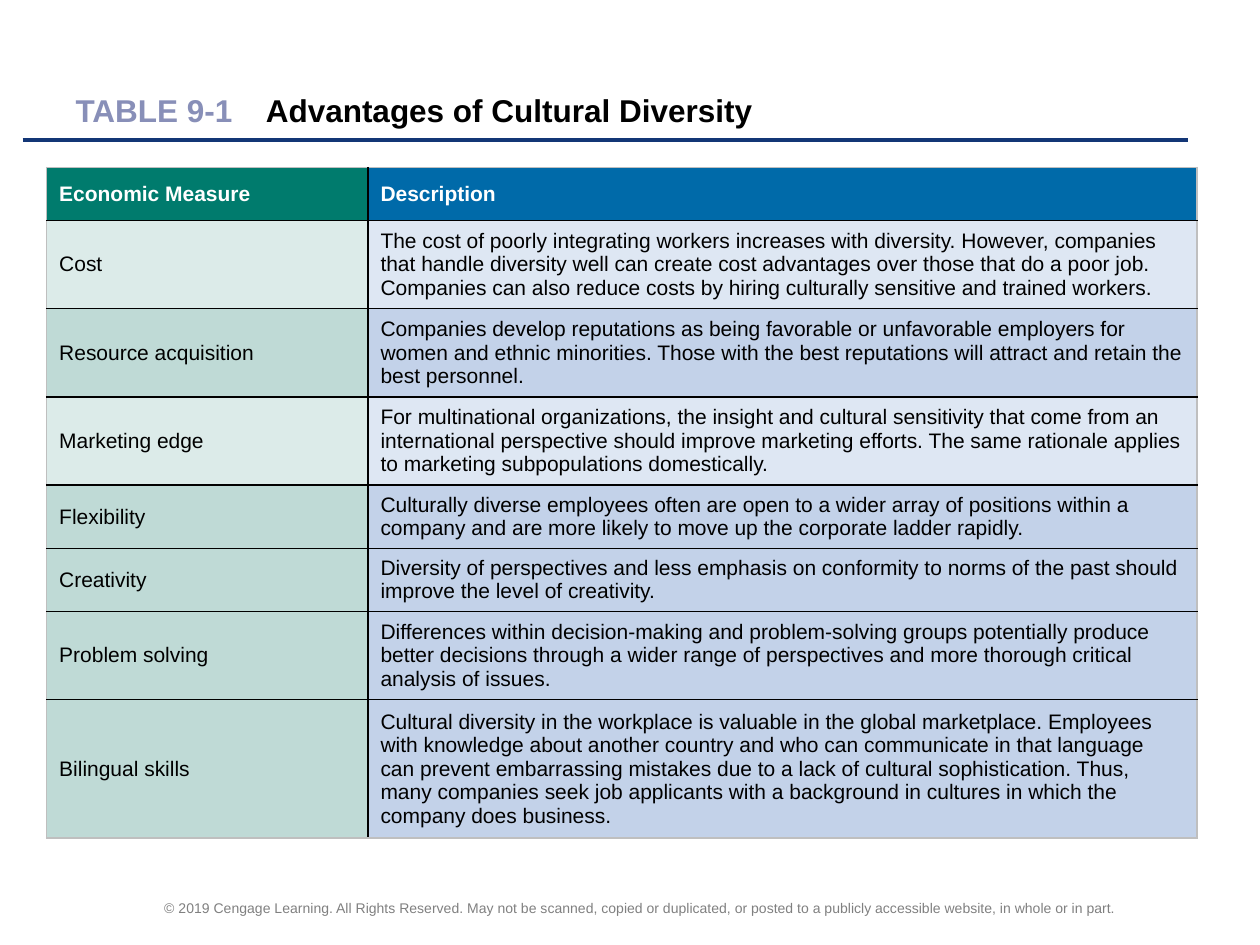
"""Build the Table 9-1 slide on the advantages of cultural diversity."""
from dataclasses import dataclass

from lxml.etree import SubElement as Sub
from pptx import Presentation
from pptx.dml.color import RGBColor as Rgb
from pptx.enum.shapes import MSO_CONNECTOR as Conn
from pptx.enum.text import MSO_ANCHOR as Anchor, PP_ALIGN as Align
from pptx.oxml.ns import qn
from pptx.util import Inches, Pt


@dataclass(frozen=True)
class Theme:
    font: str = "Arial"
    title: int = 18
    body: int = 12
    small: int = 8
    label: str = "888FB8"
    ink: str = "000000"
    paper: str = "FFFFFF"
    note: str = "808080"
    rule: str = "133676"
    edge: str = "BFBFBF"
    head: tuple = ("007B6D", "006AA9")
    light: tuple = ("DCEBE9", "DEE7F3")
    dark: tuple = ("BFDAD6", "C3D2E9")


T = Theme()
ROWS = [
    ("Economic Measure", "Description", T.head),
    ("Cost", "The cost of poorly integrating workers increases with diversity. However, companies that handle diversity well can create cost advantages over those that do a poor job. Companies can also reduce costs by hiring culturally sensitive and trained workers.", T.light),
    ("Resource acquisition", "Companies develop reputations as being favorable or unfavorable employers for women and ethnic minorities. Those with the best reputations will attract and retain the best personnel.", T.dark),
    ("Marketing edge", "For multinational organizations, the insight and cultural sensitivity that come from an international perspective should improve marketing efforts. The same rationale applies to marketing subpopulations domestically.", T.light),
    ("Flexibility", "Culturally diverse employees often are open to a wider array of positions within a company and are more likely to move up the corporate ladder rapidly.", T.dark),
    ("Creativity", "Diversity of perspectives and less emphasis on conformity to norms of the past should improve the level of creativity.", T.dark),
    ("Problem solving", "Differences within decision-making and problem-solving groups potentially produce better decisions through a wider range of perspectives and more thorough critical analysis of issues.", T.dark),
    ("Bilingual skills", "Cultural diversity in the workplace is valuable in the global marketplace. Employees with knowledge about another country and who can communicate in that language can prevent embarrassing mistakes due to a lack of cultural sophistication. Thus, many companies seek job applicants with a background in cultures in which the company does business.", T.dark),
]
NOTE = "© 2019 Cengage Learning. All Rights Reserved. May not be scanned, copied or duplicated, or posted to a publicly accessible website, in whole or in part."


def put(obj, **vals):
    for name, val in vals.items():
        setattr(obj, name, val)


def write(para, text, size, tint, bold=False):
    run = para.add_run()
    run.text = text
    put(run.font, name=T.font, size=Pt(size), bold=bold)
    run.font.color.rgb = Rgb.from_string(tint)


def add_title(slide):
    box = slide.shapes.title
    put(box, left=Inches(0.5), top=Inches(0.5),
        width=Inches(9), height=Inches(0.75))
    put(box.text_frame, vertical_anchor=Anchor.MIDDLE, word_wrap=True)
    para = box.text_frame.paragraphs[0]
    para.alignment = Align.LEFT
    tabs = Sub(para._p.get_or_add_pPr(), qn("a:tabLst"))
    Sub(tabs, qn("a:tab"), pos=str(Inches(1.51)), algn="l")
    write(para, "TABLE 9-1", T.title, T.label, True)
    write(para, "\tAdvantages of Cultural Diversity", T.title, T.ink, True)


def add_rule(slide):
    y = Inches(1.11)
    rule = slide.shapes.add_connector(
        Conn.STRAIGHT, Inches(0.18), y, Inches(9.43), y)
    rule.line.color.rgb = Rgb.from_string(T.rule)
    rule.line.width = Pt(2.25)
    Sub(rule._element.spPr, qn("a:effectLst"))


def add_note(slide):
    box = slide.shapes.add_textbox(
        Inches(0.75), Inches(7.08), Inches(8.67), Inches(0.25))
    put(box.text_frame, word_wrap=True, vertical_anchor=Anchor.MIDDLE)
    para = box.text_frame.paragraphs[0]
    para.alignment = Align.CENTER
    write(para, NOTE, T.small, T.note)


def add_edges(cell, outer):
    """Draw the four cell borders, grey on the sides named in outer."""
    props = cell._tc.get_or_add_tcPr()
    for side in "LRTB":
        line = Sub(props, qn(f"a:ln{side}"), w=str(Pt(1)))
        fill = Sub(line, qn("a:solidFill"))
        Sub(fill, qn("a:srgbClr"), val=T.edge if side in outer else T.ink)


def fill_cell(cell, text, tint, outer, head):
    add_edges(cell, outer)
    cell.fill.solid()
    cell.fill.fore_color.rgb = Rgb.from_string(tint)
    cell.vertical_anchor = Anchor.MIDDLE
    write(cell.text_frame.paragraphs[0], text, T.body,
          T.paper if head else T.ink, head)


def add_grid(slide):
    grid = slide.shapes.add_table(
        len(ROWS), 2, Inches(0.37), Inches(1.33),
        Inches(9.13), Inches(3.08)).table
    grid.horz_banding = False
    for col, width in zip(grid.columns, (2.55, 6.58)):
        col.width = Inches(width)
    last = len(ROWS) - 1
    for i, (name, desc, tints) in enumerate(ROWS):
        grid.rows[i].height = Inches(0.38 if i else 0.42)
        ends = {0: "T", last: "B"}.get(i, "")
        for j, text in enumerate((name, desc)):
            fill_cell(grid.cell(i, j), text, tints[j], ends + "LR"[j], i == 0)


def main():
    deck = Presentation()
    put(deck, slide_width=Inches(10), slide_height=Inches(7.5))
    slide = deck.slides.add_slide(deck.slide_layouts[5])
    for build in (add_note, add_rule, add_title, add_grid):
        build(slide)
    deck.save("out.pptx")


if __name__ == "__main__":
    main()
